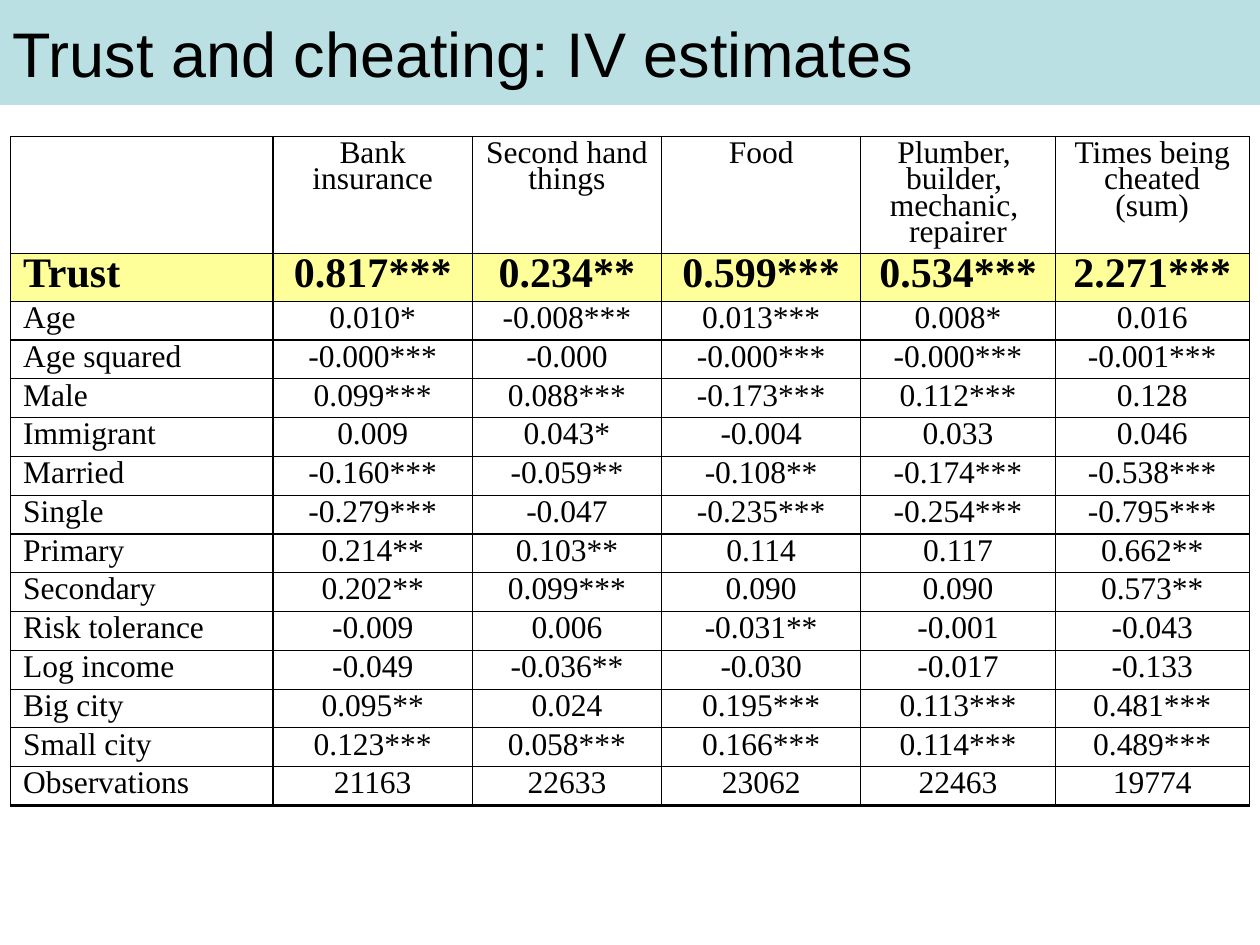
from dataclasses import dataclass

from lxml.etree import SubElement
from pptx import Presentation
from pptx.dml.color import RGBColor as RGB
from pptx.enum.text import MSO_ANCHOR as Anchor, PP_ALIGN as Align
from pptx.oxml.ns import qn
from pptx.util import Pt


@dataclass(frozen=True)
class Theme:
    ink: RGB = RGB(0, 0, 0)
    banner: RGB = RGB(0xBB, 0xE0, 0xE3)
    highlight: RGB = RGB(0xFF, 0xFF, 0x99)
    title_font: str = "Arial"
    table_font: str = "Times New Roman"
    title_size: int = 36
    body_size: int = 18
    key_size: int = 24
    rule: float = 0.75
    header_rule: float = 1
    closing_rule: float = 2


THEME = Theme()
TITLE = "Trust and cheating: IV estimates"
KEY_ROW = 1
COLUMN_WIDTHS = [150, 114, 108, 114, 111, 111]
HEADER_HEIGHT, ROW_HEIGHT = 60.5, 20.16

# A line break in a heading starts a new paragraph
HEADINGS = ["", "Bank\ninsurance", "Second hand\nthings", "Food",
            "Plumber, \nbuilder, \nmechanic, \nrepairer",
            "Times being cheated (sum)"]
ESTIMATES = [
    ["Trust", "0.817***", "0.234**", "0.599***", "0.534***", "2.271***"],
    ["Age", "0.010*", "-0.008***", "0.013***", "0.008*", "0.016"],
    ["Age squared", "-0.000***", "-0.000", "-0.000***", "-0.000***", "-0.001***"],
    ["Male", "0.099***", "0.088***", "-0.173***", "0.112***", "0.128"],
    ["Immigrant", "0.009", "0.043*", "-0.004", "0.033", "0.046"],
    ["Married", "-0.160***", "-0.059**", "-0.108**", "-0.174***", "-0.538***"],
    ["Single", "-0.279***", "-0.047", "-0.235***", "-0.254***", "-0.795***"],
    ["Primary", "0.214**", "0.103**", "0.114", "0.117", "0.662**"],
    ["Secondary", "0.202**", "0.099***", "0.090", "0.090", "0.573**"],
    ["Risk tolerance", "-0.009", "0.006", "-0.031**", "-0.001", "-0.043"],
    ["Log income", "-0.049", "-0.036**", "-0.030", "-0.017", "-0.133"],
    ["Big city", "0.095**", "0.024", "0.195***", "0.113***", "0.481***"],
    ["Small city", "0.123***", "0.058***", "0.166***", "0.114***", "0.489***"],
    ["Observations", "21163", "22633", "23062", "22463", "19774"],
]


def add_run(paragraph, text, font, size, bold=False):
    run = paragraph.add_run()
    run.text = text
    run.font.name, run.font.size, run.font.bold = font, Pt(size), bold
    run.font.color.rgb = THEME.ink


def set_borders(cell, top, bottom):
    properties = cell._tc.get_or_add_tcPr()
    widths = {"a:lnL": THEME.rule, "a:lnR": THEME.rule,
              "a:lnT": top, "a:lnB": bottom}
    for side, width in widths.items():
        line = SubElement(properties, qn(side), w=str(Pt(width)))
        fill = SubElement(line, qn("a:solidFill"))
        SubElement(fill, qn("a:srgbClr"), val=str(THEME.ink))


def space_before_percent(paragraph, percent):
    spacing = SubElement(paragraph._p.get_or_add_pPr(), qn("a:spcBef"))
    SubElement(spacing, qn("a:spcPct"), val=str(percent * 1000))


def write_cell(cell, text, align, size, bold):
    for index, line in enumerate(text.split("\n")):
        frame = cell.text_frame
        paragraph = frame.add_paragraph() if index else frame.paragraphs[0]
        paragraph.alignment = align
        paragraph.line_spacing = 0.75
        space_before_percent(paragraph, 0 if index else 20)
        if line:
            add_run(paragraph, line, THEME.table_font, size, bold)


def place_title(slide, left, top, width, height):
    title = slide.shapes.title
    title.left, title.top = Pt(left), Pt(top)
    title.width, title.height = Pt(width), Pt(height)
    title.fill.solid()
    title.fill.fore_color.rgb = THEME.banner
    title.text_frame.vertical_anchor = Anchor.MIDDLE
    heading = title.text_frame.paragraphs[0]
    heading.alignment = Align.LEFT
    add_run(heading, TITLE, THEME.title_font, THEME.title_size)


def place_estimates(slide, left, top):
    rows = [HEADINGS] + ESTIMATES
    heights = [HEADER_HEIGHT] + [ROW_HEIGHT] * len(ESTIMATES)
    table = slide.shapes.add_table(
        len(rows), len(HEADINGS), Pt(left), Pt(top),
        Pt(sum(COLUMN_WIDTHS)), Pt(sum(heights))).table
    table.first_row = table.horz_banding = False
    for column, width in zip(table.columns, COLUMN_WIDTHS):
        column.width = Pt(width)

    # Rules below each row; a row's top rule is the one above it
    rules = [THEME.header_rule] + [THEME.rule] * (len(rows) - 2) + [THEME.closing_rule]
    for r, values in enumerate(rows):
        table.rows[r].height = Pt(heights[r])
        is_key = r == KEY_ROW
        size = THEME.key_size if is_key else THEME.body_size
        for c, value in enumerate(values):
            cell = table.cell(r, c)
            write_cell(cell, value, Align.CENTER if c else Align.LEFT, size, is_key)
            set_borders(cell, rules[r - 1] if r else THEME.rule, rules[r])
            if is_key:
                cell.fill.solid()
                cell.fill.fore_color.rgb = THEME.highlight
            else:
                cell.fill.background()
    # The empty corner keeps the body size
    table.cell(0, 0).text_frame.paragraphs[0].font.size = Pt(THEME.body_size)


def main():
    deck = Presentation()
    deck.slide_width, deck.slide_height = Pt(720), Pt(540)
    slide = deck.slides.add_slide(deck.slide_layouts[5])
    place_title(slide, 0, 0, 720, 60)
    place_estimates(slide, 6, 78)
    deck.save("out.pptx")


if __name__ == "__main__":
    main()
